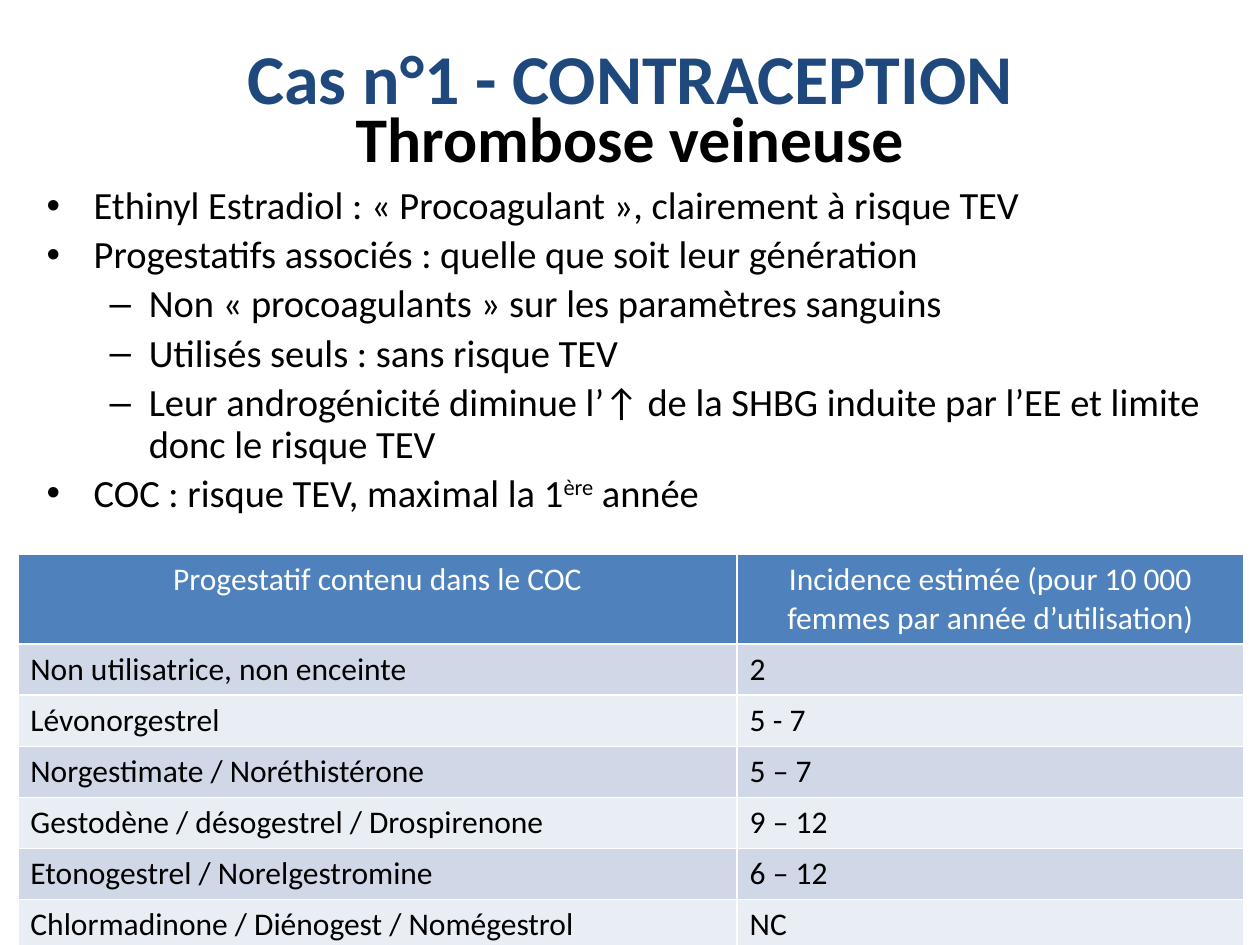
from lxml import etree
from pptx import Presentation
from pptx.dml.color import RGBColor
from pptx.enum.text import MSO_ANCHOR, MSO_AUTO_SIZE, PP_ALIGN
from pptx.oxml.ns import qn
from pptx.util import Cm, Pt

LEFT, CENTER = PP_ALIGN.LEFT, PP_ALIGN.CENTER
TOP, MIDDLE = MSO_ANCHOR.TOP, MSO_ANCHOR.MIDDLE
NO_AUTOFIT = MSO_AUTO_SIZE.NONE
TITLE_ONLY = 5

COLORS = {
    "title": "1F497D",
    "text": "000000",
    "header_text": "FFFFFF",
    "header": "4F81BD",
    "band_dark": "D0D8E8",
    "band_light": "E9EDF4",
}

# Bullet character, left margin and hanging indent (cm) for each level
BULLETS = [("•", 0.95, 0.95), ("–", 2.06, 0.79)]

# Level, then the runs; every second run is superscript
POINTS = [
    (0, ["Ethinyl Estradiol : « Procoagulant », clairement à risque TEV"]),
    (0, ["Progestatifs associés : quelle que soit leur génération"]),
    (1, ["Non « procoagulants » sur les paramètres sanguins"]),
    (1, ["Utilisés seuls : sans risque TEV"]),
    (1, ["Leur androgénicité diminue l’↑ de la SHBG induite par l’EE "
         "et limite donc le risque TEV"]),
    (0, ["COC : risque TEV, maximal la 1", "ère", " année"]),
]

INCIDENCE = [
    ("Progestatif contenu dans le COC",
     "Incidence estimée (pour 10 000 femmes par année d’utilisation)"),
    ("Non utilisatrice, non enceinte", "2"),
    ("Lévonorgestrel", "5 - 7"),
    ("Norgestimate / Noréthistérone", "5 – 7"),
    ("Gestodène / désogestrel / Drospirenone", "9 – 12"),
    ("Etonogestrel / Norelgestromine", "6 – 12"),
    ("Chlormadinone / Diénogest / Nomégestrol", "NC"),
]


def add_text(paragraph, text, *, font, size, color="text", bold=False,
             align=LEFT, superscript=False):
    paragraph.alignment = align
    run = paragraph.add_run()
    run.text = text
    run.font.name = font
    run.font.size = Pt(size)
    run.font.bold = bold
    run.font.color.rgb = RGBColor.from_string(COLORS[color])
    if superscript:
        run.font._element.set("baseline", "30000")


class SlideBuilder:
    def __init__(self, slide, font="Calibri"):
        self.slide = slide
        self.font = font

    def place(self, shape, left, top, width, height, anchor):
        shape.left, shape.top = Cm(left), Cm(top)
        shape.width, shape.height = Cm(width), Cm(height)
        frame = shape.text_frame
        frame.word_wrap = True
        frame.auto_size = NO_AUTOFIT
        frame.vertical_anchor = anchor
        return frame

    def text_box(self, left, top, width, height, anchor=TOP):
        shape = self.slide.shapes.add_textbox(0, 0, 0, 0)
        return self.place(shape, left, top, width, height, anchor)

    def title(self, text, *box):
        frame = self.place(self.slide.shapes.title, *box, MIDDLE)
        add_text(frame.paragraphs[0], text, font=self.font, size=40,
                 color="title", bold=True, align=CENTER)

    def subtitle(self, text, *box):
        frame = self.text_box(*box, anchor=MIDDLE)
        add_text(frame.paragraphs[0], text, font=self.font, size=36.3,
                 bold=True, align=CENTER)

    def bullet_list(self, points, *box):
        frame = self.text_box(*box)
        for index, (level, runs) in enumerate(points):
            paragraph = frame.add_paragraph() if index else frame.paragraphs[0]
            paragraph.level = level
            paragraph.line_spacing = 0.9
            paragraph.space_before = Pt(4.4)
            character, margin, hanging = BULLETS[level]
            properties = paragraph._p.get_or_add_pPr()
            properties.set("marL", str(Cm(margin)))
            properties.set("indent", str(-Cm(hanging)))
            etree.SubElement(properties, qn("a:buFont"), typeface="Arial")
            etree.SubElement(properties, qn("a:buChar"), char=character)
            for position, text in enumerate(runs):
                add_text(paragraph, text, font=self.font, size=22,
                         superscript=position % 2 == 1)

    def table(self, rows, left, top, column_widths, header_height, row_height):
        heights = [header_height] + [row_height] * (len(rows) - 1)
        table = self.slide.shapes.add_table(
            len(rows), len(column_widths), Cm(left), Cm(top),
            Cm(sum(column_widths)), Cm(sum(heights))).table
        for column, width in zip(table.columns, column_widths):
            column.width = Cm(width)
        for index, (row, height, texts) in enumerate(
                zip(table.rows, heights, rows)):
            row.height = Cm(height)
            header = index == 0
            band = "band_dark" if index % 2 else "band_light"
            fill = COLORS["header" if header else band]
            for cell, text in zip(row.cells, texts):
                cell.fill.solid()
                cell.fill.fore_color.rgb = RGBColor.from_string(fill)
                add_text(cell.text_frame.paragraphs[0], text,
                         font=self.font, size=18,
                         color="header_text" if header else "text",
                         align=CENTER if header else LEFT)


def main():
    presentation = Presentation()
    presentation.slide_width, presentation.slide_height = Cm(25.4), Cm(19.05)
    layout = presentation.slide_layouts[TITLE_ONLY]
    builder = SlideBuilder(presentation.slides.add_slide(layout))

    # Headings
    builder.title("Cas n°1 - CONTRACEPTION", 1.27, 0.76, 22.86, 1.55)
    builder.subtitle("Thrombose veineuse", 1.27, 1.98, 22.86, 1.55)

    # Key points
    builder.bullet_list(POINTS, 0.69, 3.63, 24.71, 7.11)

    # Incidence by progestin
    builder.table(INCIDENCE, 0.36, 11.18, [14.5, 10.21], 1.78, 1.03)

    presentation.save("out.pptx")


if __name__ == "__main__":
    main()
